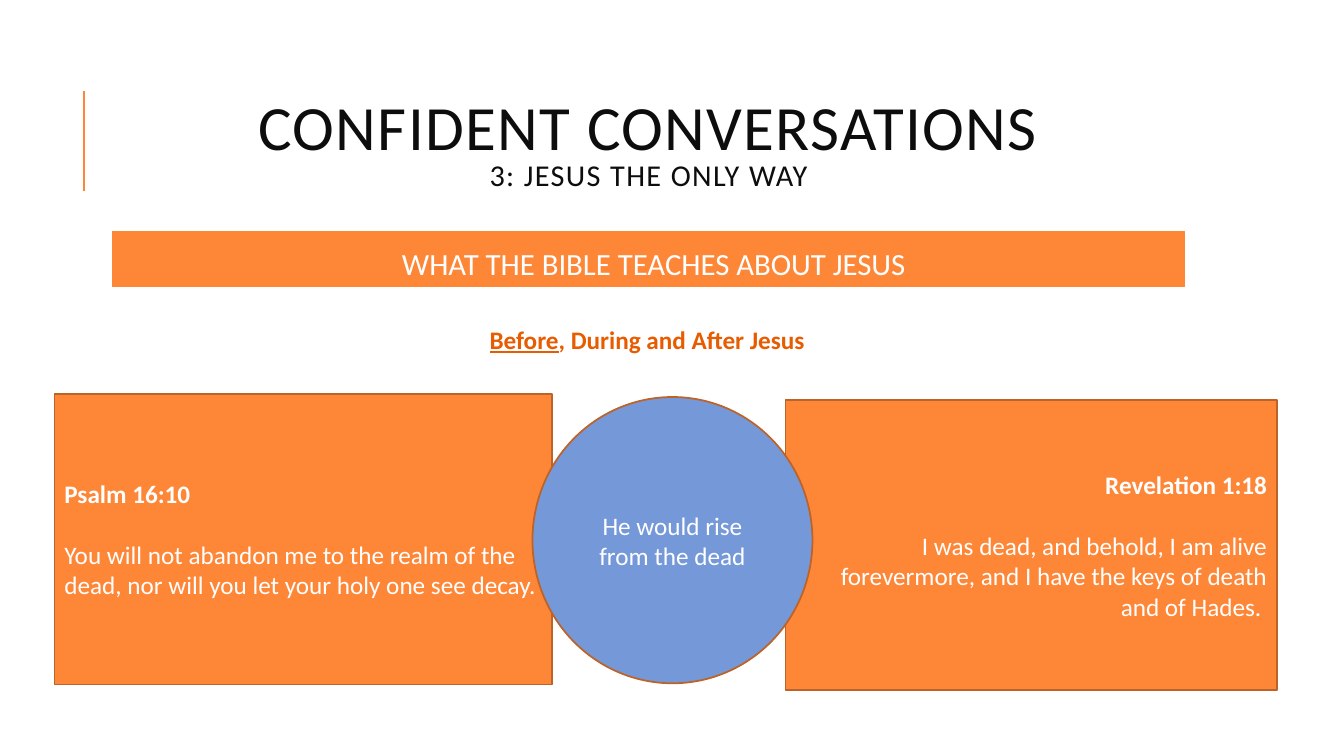
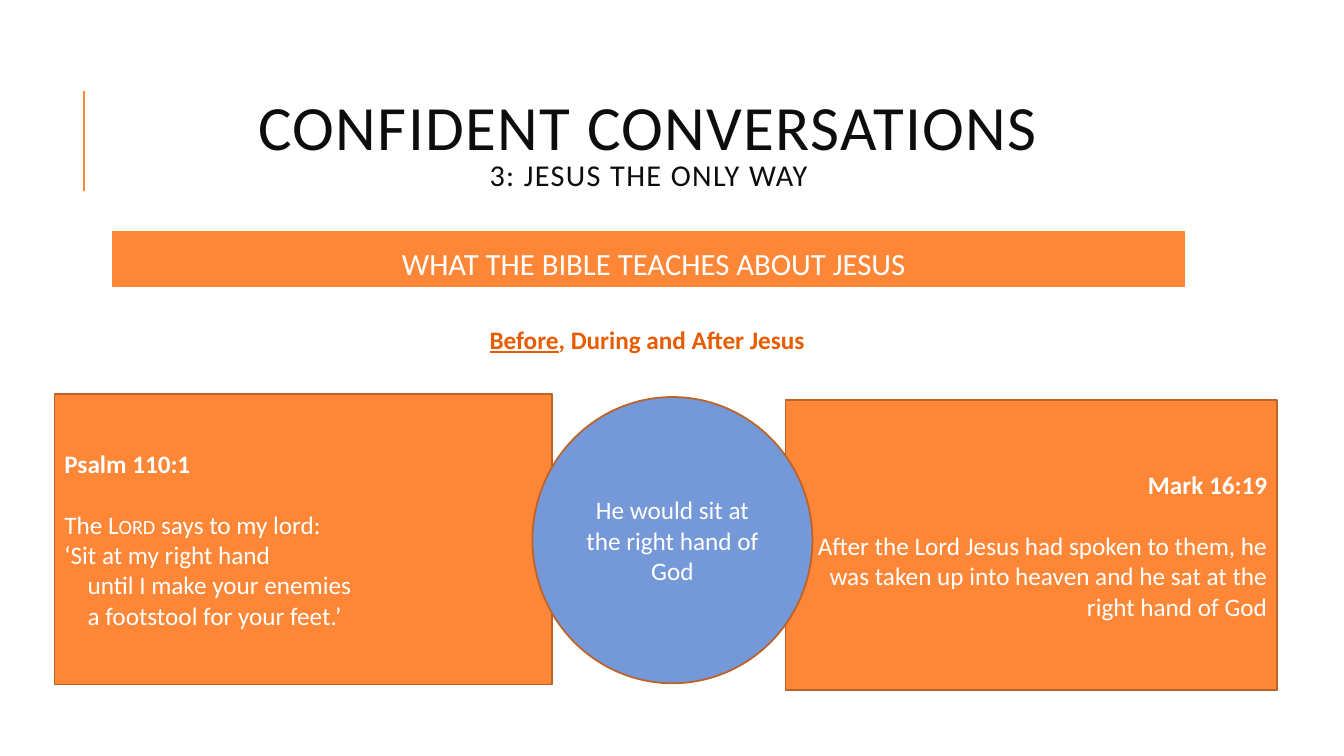
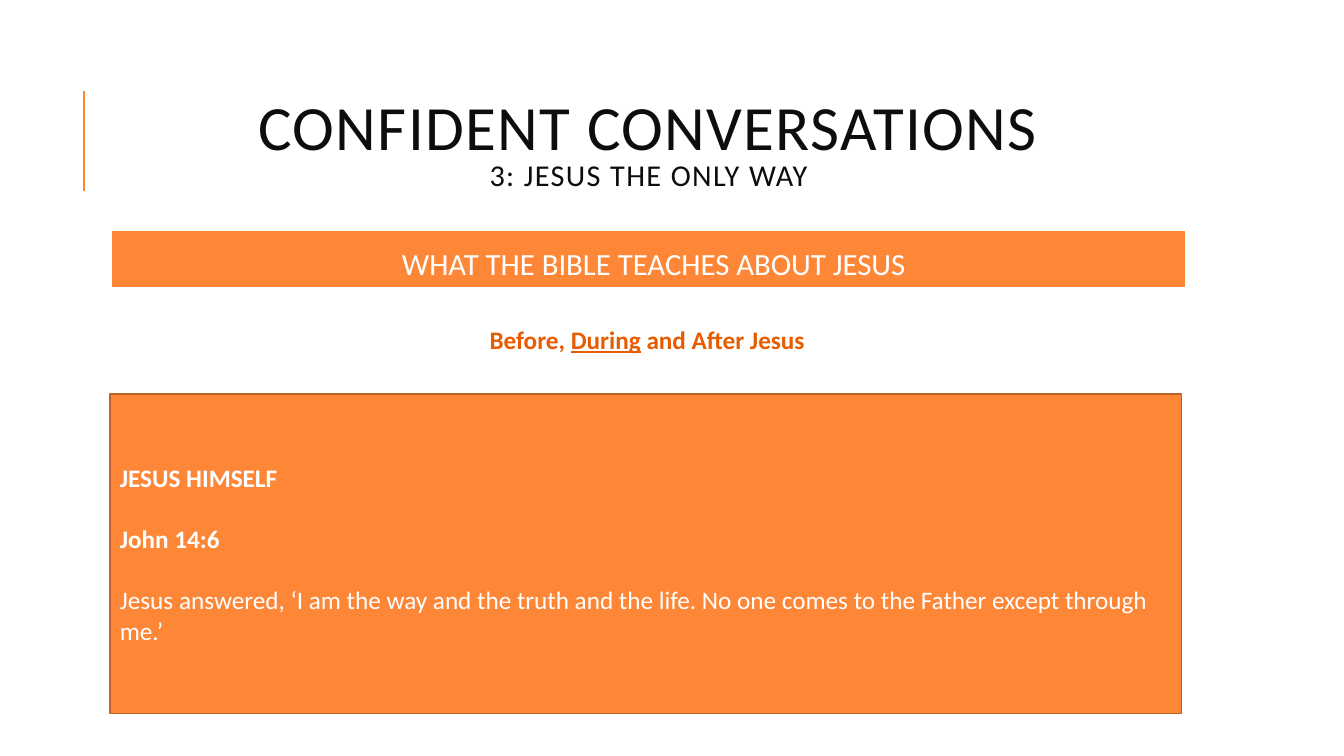
from lxml.etree import SubElement
from pptx import Presentation
from pptx.dml.color import RGBColor
from pptx.enum.shapes import MSO_CONNECTOR, MSO_SHAPE
from pptx.enum.text import MSO_ANCHOR, MSO_AUTO_SIZE, PP_ALIGN
from pptx.oxml.ns import qn
from pptx.util import Inches, Pt

ORANGE, RUST, BLUE = "FE8637", "BC6329", "7598D9"
WHITE, INK, ACCENT = "FFFFFF", "0D0D0D", "E75C01"
FONT = "Calibri"
BODY_SIZE, LINE_GAP = 18, 22
BOLD, UNDERLINE = {"bold": True}, {"underline": True}
SMALL_CAPS = {"cap": "small"}
GAP = {"space_before": Pt(LINE_GAP)}
LEFT, CENTER, RIGHT = PP_ALIGN.LEFT, PP_ALIGN.CENTER, PP_ALIGN.RIGHT

PAGE = (0, 0, Inches(13.333), Inches(7.5))
REGIONS = {
    "rule": (6.23, 12, 0, 13.33),
    "title": (8.4, 8.53, 79.73, 21.87),
    "band": (8.4, 30.67, 79.73, 7.2),
    "periods": (8.4, 42.2, 79.5, 5.4),
    "comparison": (4.05, 52.13, 90.97, 39.2),
    "quotation": (8.18, 52.13, 79.73, 42.27),
}


def part(box, left, top, width, height):
    """Return the box that covers the given percentages of another box."""
    x, y, w, h = box
    return (int(x + w * left / 100), int(y + h * top / 100),
            int(w * width / 100), int(h * height / 100))


def region(name):
    """Return the box of a named region of the slide."""
    return part(PAGE, *REGIONS[name])


def rgb(value):
    """Turn a hex string into a colour."""
    return RGBColor.from_string(value)


def apply(target, values):
    """Set each named attribute on the target."""
    for name, value in values.items():
        setattr(target, name, value)


def place(sp, box):
    """Move a shape to a box."""
    apply(sp, dict(zip(("left", "top", "width", "height"), box)))


def paint(sp, fill, line, width):
    """Give a shape a solid fill and an outline."""
    sp.fill.solid()
    sp.fill.fore_color.rgb = rgb(fill)
    sp.line.color.rgb = rgb(line)
    sp.line.width = Pt(width)


def add_run(p, text, color, size=BODY_SIZE, bold=False, underline=False, **attributes):
    """Append a formatted run to a paragraph."""
    r = p.add_run()
    r.text = text
    apply(r.font, {"name": FONT, "size": Pt(size), "bold": bold, "underline": underline})
    r.font.color.rgb = rgb(color)
    for name, value in attributes.items():
        r._r.get_or_add_rPr().set(name, value)


def write(sp, paragraphs, color, align, anchor=MSO_ANCHOR.MIDDLE):
    """Fill a shape with paragraphs of (runs, paragraph format)."""
    tf = sp.text_frame
    apply(tf, {"word_wrap": True, "auto_size": MSO_AUTO_SIZE.NONE, "vertical_anchor": anchor})
    for i, (runs, values) in enumerate(paragraphs):
        p = tf.add_paragraph() if i else tf.paragraphs[0]
        apply(p, {"alignment": align, "space_before": Pt(0), **values})
        for text, style in runs:
            if text == "\n":
                p.add_line_break()
            else:
                add_run(p, text, color, **style)


def indent(p, inches):
    """Indent a paragraph without a bullet."""
    pPr = p._p.get_or_add_pPr()
    pPr.set("marL", str(Inches(inches)))
    pPr.set("indent", "0")
    return pPr


def add_rule(slide):
    """Draw the accent line and hand it to the layout shared by all slides."""
    x, y, w, h = region("rule")
    rule = slide.shapes.add_connector(MSO_CONNECTOR.STRAIGHT, x, y + h, x + w, y)
    rule.line.color.rgb = rgb(ORANGE)
    rule.line.width = Pt(1.5)
    SubElement(rule.element.spPr, qn("a:effectLst"))
    slide.slide_layout.shapes.element.append(rule.element)


def add_heading(slide, period):
    """Place the title, the band and the list of periods with one underlined."""
    title, band = slide.shapes.title, slide.placeholders[1]
    place(title, region("title"))
    write(title, [([("CONFIDENT CONVERSATIONS", {"size": 45, "spc": "100"}), ("\n", {}),
                    ("3: JESUS THE ONLY WAY", {"size": 21.6, "spc": "100"})],
                   {"line_spacing": 0.8})], INK, CENTER)

    place(band, region("band"))
    paint(band, ORANGE, ORANGE, 0.75)
    apply(band.text_frame, {"margin_" + side: Inches(0.05)
                            for side in ("left", "top", "right", "bottom")})
    write(band, [([("WHAT THE BIBLE TEACHES ABOUT JESUS", {"size": 22})],
                  {"line_spacing": 1.2, "space_after": Pt(2)})], WHITE, CENTER, MSO_ANCHOR.TOP)
    SubElement(indent(band.text_frame.paragraphs[0], 0.1), qn("a:buNone"))

    before, after = "Before, During and After Jesus".split(period)
    runs = [(before, BOLD), (period, BOLD | UNDERLINE), (after, BOLD)]
    periods = slide.shapes.add_textbox(*region("periods"))
    write(periods, [([r for r in runs if r[0]], {})], ACCENT, CENTER, MSO_ANCHOR.TOP)


def add_panel(slide, box, paragraphs, align=LEFT, kind=MSO_SHAPE.RECTANGLE, fill=ORANGE):
    """Add an outlined shape with white text."""
    sp = slide.shapes.add_shape(kind, *box)
    sp.shadow.inherit = False
    paint(sp, fill, RUST, 1.25)
    write(sp, paragraphs, WHITE, align)
    return sp


def add_comparison(slide, box, prophecy, claim, fulfilment):
    """Place two passages side by side, joined by a circle with the claim."""
    left = add_panel(slide, part(box, 0, 0, 40.7, 98), prophecy)
    add_panel(slide, part(box, 59.8, 2, 40.2, 98), fulfilment, RIGHT)
    add_panel(slide, part(box, 39.1, 1, 22.9, 96.6), [plain(claim)], CENTER,
              MSO_SHAPE.OVAL, BLUE)
    return left


def plain(text, **values):
    """Return a paragraph of regular text."""
    return [(text, {})], values


def strong(text, **values):
    """Return a paragraph of bold text."""
    return [(text, BOLD)], values


def new_slide(prs, period):
    """Add a slide with the shared heading."""
    slide = prs.slides.add_slide(prs.slide_layouts[1])
    add_heading(slide, period)
    return slide


def main():
    """Build and save the presentation."""
    prs = Presentation()
    prs.slide_width, prs.slide_height = PAGE[2:]

    slide = new_slide(prs, "Before")
    add_rule(slide)
    add_comparison(
        slide, region("comparison"),
        [strong("Psalm 16:10"),
         plain("You will not abandon me to the realm of the dead, "
               "nor will you let your holy one see decay.", **GAP)],
        "He would rise from the dead",
        [strong("Revelation 1:18"),
         plain("I was dead, and behold, I am alive forevermore, "
               "and I have the keys of death", **GAP),
         plain("and of Hades. ")])

    slide = new_slide(prs, "Before")
    psalm = add_comparison(
        slide, region("comparison"),
        [strong("Psalm 110:1"),
         ([("The ", {}), ("Lord", SMALL_CAPS), (" says to my lord:", {})], GAP),
         plain("‘Sit at my right hand"),
         plain("until I make your enemies"),
         plain("a footstool for your feet.’")],
        "He would sit at the right hand of God",
        [strong("Mark 16:19"),
         plain("After the Lord Jesus had spoken to them, he was taken up into heaven "
               "and he sat at the right hand of God", **GAP)])
    for p in psalm.text_frame.paragraphs[-2:]:
        indent(p, 0.23)

    slide = new_slide(prs, "During")
    add_panel(slide, region("quotation"), [
        strong("JESUS HIMSELF"),
        strong("John 14:6", **GAP),
        plain("Jesus answered, ‘I am the way and the truth and the life. "
              "No one comes to the Father except through me.’", **GAP)])

    prs.save("out.pptx")


if __name__ == "__main__":
    main()
